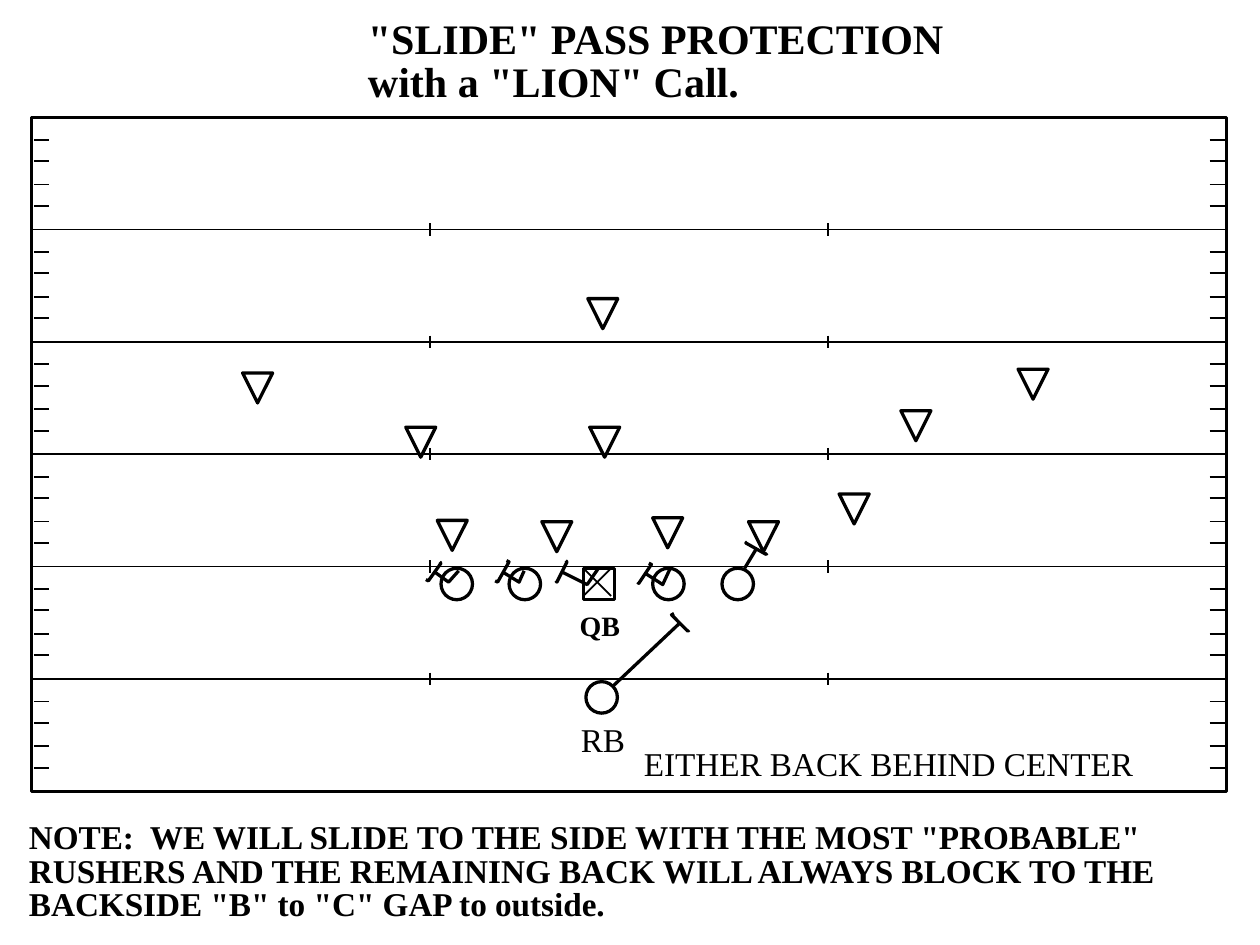
from dataclasses import dataclass
from itertools import product

from lxml.etree import SubElement
from pptx import Presentation
from pptx.dml.color import RGBColor
from pptx.enum.shapes import MSO_CONNECTOR as Connector, MSO_SHAPE as Preset
from pptx.enum.text import MSO_AUTO_SIZE as AutoSize
from pptx.oxml.ns import qn
from pptx.util import Emu, Inches, Pt

COLUMNS, ROWS = 100, 75
INK, PAPER = "000000", "FFFFFF"
FONT = "Times New Roman"
THIN, THICK = 1, 1.88
PLAYER, DEFENDER = 2.5, 2.38
Point = tuple[float, float]


@dataclass(frozen=True)
class Field:
    left: float = 2.5
    top: float = 9.3
    width: float = 94.85
    height: float = 53.5
    bands: int = 6

    @property
    def band(self) -> float:
        return self.height / self.bands

    @property
    def right(self) -> float:
        return self.left + self.width


@dataclass(frozen=True)
class Label:
    text: str
    left: float
    top: float
    width: float
    height: float
    size: int
    bold: bool = False


@dataclass(frozen=True)
class Block:
    route: tuple[Point, ...]
    bar: tuple[Point, ...]


FIELD = Field()
YARD_SHARES = (0.2, 0.39, 0.6, 0.79)
DEFENDERS = (
    (34.7, 41.3), (43, 41.4), (59.4, 41.4), (32.2, 33.9), (46.8, 33.9), (51.8, 41.1),
    (66.6, 39.2), (19.25, 29.6), (80.8, 29.3), (71.5, 32.6), (46.65, 23.7),
)
CENTER = (46.3, 45.1)
BACK = (46.5, 54.1)
LINEMEN = ((35, 45.1), (40.4, 45.1), (51.8, 45.1), (57.3, 45.1))

BLOCKS = (
    Block(((59.1, 45.1), (60, 43.6)), ((60.9, 43.9), (60.8, 44), (59.2, 43.1), (59.3, 43))),
    Block(((48.6, 54.5), (53.9, 49.5)), ((54.7, 50), (54.6, 50.1), (53.3, 48.8), (53.5, 48.7))),
    Block(((47.5, 45.1), (46.6, 46.4), (44.6, 45.4)), ((44.9, 44.5), (45, 44.6), (44.2, 46.2), (44.1, 46.1))),
    Block(((53.2, 45.1), (52.6, 46.4), (51.2, 45.5)), ((51.5, 44.7), (51.7, 44.8), (50.7, 46.3), (50.6, 46.2))),
    Block(((36.4, 45.3), (35.6, 46.2), (34.5, 45.4)), ((34.9, 44.6), (35, 44.7), (34, 46.1), (33.8, 46))),
    Block(((41.6, 45.3), (41.2, 46.2), (39.9, 45.4)), ((40.2, 44.5), (40.4, 44.6), (39.5, 46.2), (39.3, 46.1))),
)
LABELS = (
    Label("EITHER BACK BEHIND CENTER", 51.1, 59, 42, 3.7, 19),
    Label("RB", 46.1, 57.1, 4.8, 3.7, 19),
    Label("QB", 46, 48.3, 4.1, 3, 16, True),
    Label('"SLIDE" PASS PROTECTION', 29.2, 1, 49.4, 4.6, 24, True),
    Label('with a "LION" Call.', 29.2, 4.4, 32.2, 4.6, 24, True),
    Label('NOTE:  WE WILL SLIDE TO THE SIDE WITH THE MOST "PROBABLE"', 2.3, 64.8, 95.3, 3.7, 19, True),
    Label("RUSHERS AND THE REMAINING BACK WILL ALWAYS BLOCK TO THE", 2.3, 67.45, 97.4, 3.7, 19, True),
    Label('BACKSIDE "B" to "C" GAP to outside.', 2.3, 70.1, 49.5, 3.7, 19, True),
)

presentation = Presentation()
presentation.slide_width, presentation.slide_height = Inches(10), Inches(7.5)
slide = presentation.slides.add_slide(presentation.slide_layouts[6])


def across(columns: float) -> Emu:
    """Convert grid columns to a length."""
    return Emu(round(presentation.slide_width * columns / COLUMNS))


def down(rows: float) -> Emu:
    """Convert grid rows to a length."""
    return Emu(round(presentation.slide_height * rows / ROWS))


def color(value: str) -> RGBColor:
    """Convert a hex string to a colour."""
    return RGBColor.from_string(value)


def draw_line(start: Point, end: Point, weight: float = THIN) -> None:
    """Draw a straight line without a shadow."""
    line = slide.shapes.add_connector(
        Connector.STRAIGHT, across(start[0]), down(start[1]), across(end[0]), down(end[1])
    )
    line.line.color.rgb, line.line.width = color(INK), Pt(weight)
    SubElement(line._element.spPr, qn("a:effectLst"))


def style(shape, filled: bool) -> None:
    """Give a shape a thick outline and a plain or empty fill."""
    shape.shadow.inherit = False
    shape.line.color.rgb, shape.line.width = color(INK), Pt(THICK)
    if filled:
        shape.fill.solid()
        shape.fill.fore_color.rgb = color(PAPER)
    else:
        shape.fill.background()


def draw_preset(preset: Preset, left: float, top: float, width: float, height: float, filled: bool = True) -> None:
    """Draw a preset shape on the grid."""
    style(slide.shapes.add_shape(preset, across(left), down(top), across(width), down(height)), filled)


def draw_outline(points: tuple[Point, ...], closed: bool = False) -> None:
    """Draw a run of straight segments, filled when closed."""
    first, *rest = [(across(x), down(y)) for x, y in points]
    builder = slide.shapes.build_freeform(*first)
    builder.add_line_segments(rest, close=closed)
    style(builder.convert_to_shape(), closed)


def draw_field(field: Field) -> None:
    """Draw the yard lines, hash marks, side ticks and border."""
    for band, share in product(range(field.bands), YARD_SHARES):
        y = field.top + (band + share) * field.band
        for x in (field.left + 0.2, field.right - 1.35):
            draw_line((x, y), (x + 1.2, y))
    for band in range(1, field.bands):
        y = field.top + band * field.band
        draw_line((field.left, y), (field.right, y))
        for third in (1, 2):
            x = field.left + third * field.width / 3
            draw_line((x, y - 0.5), (x, y + 0.5))
    draw_preset(Preset.RECTANGLE, field.left, field.top, field.width, field.height, False)


def draw_label(label: Label) -> None:
    """Write one line of text."""
    box = slide.shapes.add_textbox(across(label.left), down(label.top), across(label.width), down(label.height))
    frame = box.text_frame
    frame.margin_left = frame.margin_right = frame.margin_top = frame.margin_bottom = 0
    frame.word_wrap, frame.auto_size = False, AutoSize.SHAPE_TO_FIT_TEXT
    run = frame.paragraphs[0].add_run()
    run.text = label.text
    run.font.name, run.font.size, run.font.bold = FONT, Pt(label.size), label.bold
    run.font.color.rgb = color(INK)


def draw_defender(left: float, top: float) -> None:
    """Draw a triangle pointing down."""
    draw_outline(
        ((left, top), (left + DEFENDER, top), (left + DEFENDER / 2, top + DEFENDER)), True
    )


def draw_center(left: float, top: float, cross: float = 2.2) -> None:
    """Draw the crossed square of the center."""
    draw_preset(Preset.RECTANGLE, left, top, PLAYER, PLAYER)
    draw_line((left, top), (left + cross, top + cross))
    draw_line((left, top + cross), (left + cross, top))


def draw_block(block: Block) -> None:
    """Draw a blocking route and its end bar."""
    if len(block.route) == 2:
        draw_line(*block.route, THICK)
    else:
        draw_outline(block.route)
    draw_outline(block.bar)


def main() -> None:
    """Build and save the slide."""
    draw_field(FIELD)
    for label in LABELS:
        draw_label(label)
    for defender in DEFENDERS:
        draw_defender(*defender)
    for player in (*LINEMEN, BACK):
        draw_preset(Preset.OVAL, *player, PLAYER, PLAYER)
    draw_center(*CENTER)
    for block in BLOCKS:
        draw_block(block)
    presentation.save("out.pptx")


if __name__ == "__main__":
    main()
